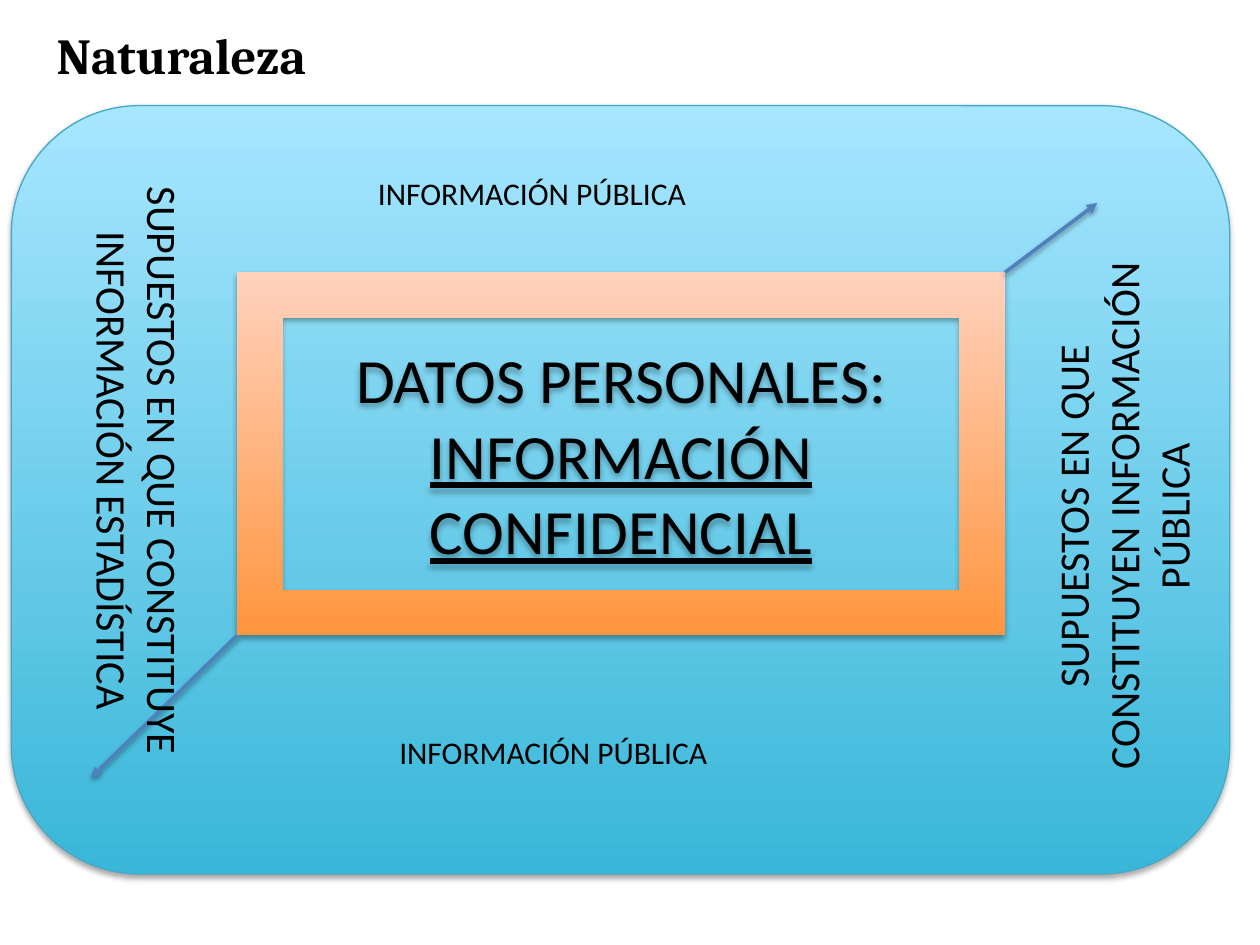
from lxml import etree
from pptx import Presentation
from pptx.dml.color import RGBColor
from pptx.enum.shapes import MSO_CONNECTOR, MSO_SHAPE
from pptx.enum.text import MSO_ANCHOR, MSO_AUTO_SIZE, PP_ALIGN
from pptx.oxml.ns import qn
from pptx.util import Cm, Pt

ROUNDED, FRAME = MSO_SHAPE.ROUNDED_RECTANGLE, MSO_SHAPE.FRAME
STRAIGHT = MSO_CONNECTOR.STRAIGHT
TOP, MIDDLE = MSO_ANCHOR.TOP, MSO_ANCHOR.MIDDLE
LEFT, CENTER = PP_ALIGN.LEFT, PP_ALIGN.CENTER
GROW, FIXED = MSO_AUTO_SIZE.SHAPE_TO_FIT_TEXT, MSO_AUTO_SIZE.NONE
COLORS = {
    "text": "000000",
    "shadow": "000000",
    "panel_bottom": "39B7D8",
    "panel_top": "A7E6FF",
    "panel_line": "46AAC5",
    "frame_bottom": "FF953E",
    "frame_top": "FFD2BD",
    "arrow": "4F81BD",
}


def color(name):
    return RGBColor.from_string(COLORS[name])


def add_shadow(shape, distance, opacity):
    properties = shape.element.spPr
    effects = properties.find(qn("a:effectLst"))
    if effects is None:
        effects = etree.SubElement(properties, qn("a:effectLst"))
    shadow = etree.SubElement(
        effects, qn("a:outerShdw"), blurRad=str(Pt(3.1)), dist=str(Pt(distance)),
        dir="5400000", rotWithShape="0")
    tint = etree.SubElement(shadow, qn("a:srgbClr"), val=COLORS["shadow"])
    etree.SubElement(tint, qn("a:alpha"), val=str(opacity * 1000))


def write_text(shape, *spans, size, font="Calibri", bold=False, align=LEFT,
               anchor=TOP, fit=FIXED):
    frame = shape.text_frame
    frame.word_wrap = True
    frame.auto_size = fit
    frame.vertical_anchor = anchor
    para = frame.paragraphs[0]
    para.alignment = align
    for text, underline in spans:
        span = para.add_run()
        span.text = text
        span.font.name = font
        span.font.size = Pt(size)
        span.font.bold = bold
        span.font.underline = underline
        span.font.color.rgb = color("text")


def add_text(page, box, text, rotation=0, **style):
    shape = page.shapes.add_textbox(*map(Cm, box))
    shape.rotation = rotation
    write_text(shape, (text, False), **style)


def add_gradient_shape(page, kind, box, name, line=None):
    shape = page.shapes.add_shape(kind, *map(Cm, box))
    shape.fill.gradient()
    shape.fill.gradient_angle = 90
    for stop, side, position in zip(shape.fill.gradient_stops, ("bottom", "top"), (0, 1)):
        stop.color.rgb = color(f"{name}_{side}")
        stop.position = position
    if line:
        shape.line.color.rgb = color(line)
        shape.line.width = Pt(0.75)
    else:
        shape.line.fill.background()
    shape.shadow.inherit = False
    add_shadow(shape, 1.8, 35)
    return shape


def add_arrow(page, start, shift):
    end = (start[0] + shift[0], start[1] + shift[1])
    arrow = page.shapes.add_connector(STRAIGHT, *map(Cm, start + end))
    arrow.line.color.rgb = color("arrow")
    arrow.line.width = Pt(2)
    etree.SubElement(arrow.line._get_or_add_ln(), qn("a:tailEnd"), type="triangle")
    add_shadow(arrow, 1.6, 38)


def add_core(page, box):
    left, top, width, height = box
    core = add_gradient_shape(page, FRAME, box, "frame")
    write_text(core, ("DATOS PERSONALES: ", False), ("INFORMACIÓN CONFIDENCIAL", True),
               size=36, align=CENTER, anchor=MIDDLE)
    add_arrow(page, (left + width, top), (1.86, -1.4))
    add_arrow(page, (left, top + height), (-2.95, 2.87))


def add_panel(page, box):
    left, top = box[:2]
    add_gradient_shape(page, ROUNDED, box, "panel", line="panel_line")
    add_core(page, (left + 4.55, top + 3.36, 15.48, 7.32))
    for x, y, width, rotation, text in (
        (16.84, 6.61, 11.15, 270, "SUPUESTOS EN QUE CONSTITUYEN INFORMACIÓN PÚBLICA"),
        (-4.45, 5.69, 12.98, 90, "SUPUESTOS EN QUE CONSTITUYE INFORMACIÓN ESTADÍSTICA"),
    ):
        add_text(page, (left + x, top + y, width, 3.33), text, rotation=rotation,
                 size=24, align=CENTER, fit=GROW)
    for x, y in ((7.14, 1.25), (7.57, 12.53)):
        add_text(page, (left + x, top + y, 12.88, 1.02), "INFORMACIÓN PÚBLICA",
                 size=18, fit=GROW)


def main():
    deck = Presentation()
    deck.slide_width, deck.slide_height = Cm(25.4), Cm(19.05)
    page = deck.slides.add_slide(deck.slide_layouts[6])
    add_text(page, (0.89, 0.36, 22.86, 1.47), "Naturaleza", size=28.8,
             font="Cambria", bold=True, anchor=MIDDLE)
    add_panel(page, (0.23, 2.13, 24.56, 15.49))
    deck.save("out.pptx")


if __name__ == "__main__":
    main()
